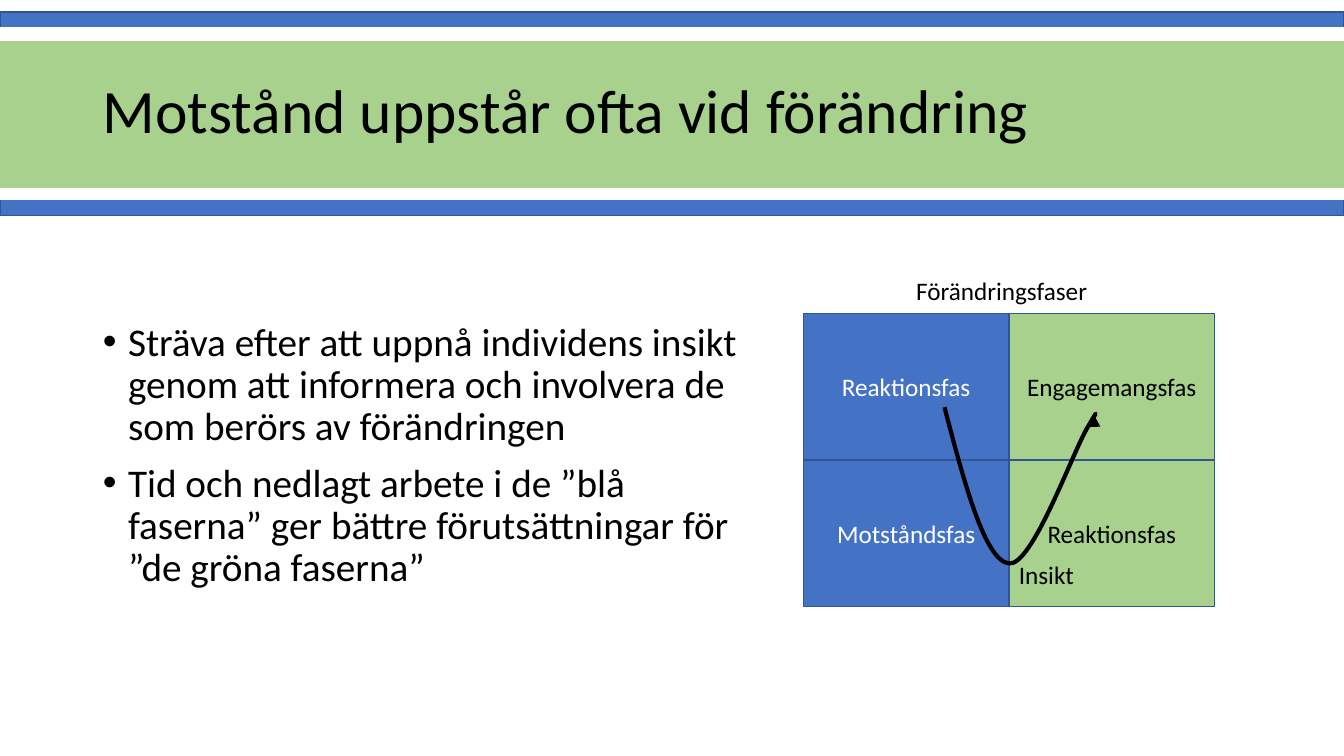
from dataclasses import dataclass

from lxml import etree
from pptx import Presentation
from pptx.dml.color import RGBColor
from pptx.enum.shapes import MSO_SHAPE
from pptx.enum.text import MSO_ANCHOR, MSO_AUTO_SIZE, PP_ALIGN
from pptx.oxml.ns import qn
from pptx.util import Pt

RECTANGLE = MSO_SHAPE.RECTANGLE
MIDDLE, TOP = MSO_ANCHOR.MIDDLE, MSO_ANCHOR.TOP
LEFT, CENTER = PP_ALIGN.LEFT, PP_ALIGN.CENTER
NO_AUTOFIT = MSO_AUTO_SIZE.NONE


@dataclass(frozen=True)
class Theme:
    font: str = "Calibri"
    blue: str = "4472C4"
    outline: str = "325491"
    green: str = "A9D18E"
    white: str = "FFFFFF"
    black: str = "000000"
    title_size: float = 44
    body_size: float = 28
    label_size: float = 18


THEME = Theme()


@dataclass(frozen=True)
class Band:
    top: float
    height: float
    fill: str
    line: str


@dataclass(frozen=True)
class Phase:
    name: str
    column: int
    row: int
    fill: str
    text_color: str


@dataclass(frozen=True)
class Label:
    text: str
    left: float
    top: float


SLIDE_WIDTH, SLIDE_HEIGHT = 960, 540
GRID_LEFT, GRID_TOP = 573.84, 223.92
PHASE_WIDTH, PHASE_HEIGHT = 146.88, 104.76
LABEL_HEIGHT = 29

BANDS = [
    Band(8.64, 145.44, THEME.blue, THEME.outline),
    Band(19.44, 123.12, THEME.white, THEME.white),
    Band(29.52, 104.4, THEME.green, THEME.green),
]
PHASES = [
    Phase("Reaktionsfas", 0, 0, THEME.blue, THEME.white),
    Phase("Motståndsfas", 0, 1, THEME.blue, THEME.white),
    Phase("Engagemangsfas", 1, 0, THEME.green, THEME.black),
    Phase("Reaktionsfas", 1, 1, THEME.green, THEME.black),
]
LABELS = [
    Label("Förändringsfaser", 647.28, 192.96),
    Label("Insikt", 720.72, 396),
]
ADVICE = [
    "Sträva efter att uppnå individens insikt genom att informera och involvera de som berörs av förändringen",
    "Tid och nedlagt arbete i de ”blå faserna” ger bättre förutsättningar för ”de gröna faserna”",
]
# Start point, then three Bézier points for each stretch
INSIGHT_CURVE = [
    (674.64, 290.88),
    (689.04, 345.6), (703.44, 400.32), (720.72, 402.48),
    (737.28, 404.64), (766.08, 323.28), (776.88, 305.28),
    (786.96, 288), (782.64, 298.08), (783.36, 295.92),
    (784.08, 294.48), (782.64, 295.2), (781.2, 295.92),
]


def place(shape, left: float, top: float, width: float, height: float) -> None:
    shape.left, shape.top = Pt(left), Pt(top)
    shape.width, shape.height = Pt(width), Pt(height)


def style(paragraph, size: float, color: str, align=LEFT) -> None:
    paragraph.alignment = align
    paragraph.font.name = THEME.font
    paragraph.font.size = Pt(size)
    paragraph.font.color.rgb = RGBColor.from_string(color)


def add_rectangle(slide, left: float, top: float, width: float, height: float,
                  fill: str, line: str):
    rectangle = slide.shapes.add_shape(RECTANGLE, Pt(left), Pt(top), Pt(width), Pt(height))
    rectangle.shadow.inherit = False
    rectangle.fill.solid()
    rectangle.fill.fore_color.rgb = RGBColor.from_string(fill)
    rectangle.line.color.rgb = RGBColor.from_string(line)
    rectangle.line.width = Pt(1)
    return rectangle


def add_phase(slide, phase: Phase) -> None:
    cell = add_rectangle(slide, GRID_LEFT + phase.column * PHASE_WIDTH,
                         GRID_TOP + phase.row * PHASE_HEIGHT,
                         PHASE_WIDTH, PHASE_HEIGHT, phase.fill, THEME.outline)
    cell.text_frame.text = phase.name
    cell.text_frame.vertical_anchor = MIDDLE
    style(cell.text_frame.paragraphs[0], THEME.label_size, phase.text_color, CENTER)


def add_label(slide, label: Label) -> None:
    caption = slide.shapes.add_textbox(Pt(label.left), Pt(label.top),
                                       Pt(PHASE_WIDTH), Pt(LABEL_HEIGHT))
    caption.text_frame.word_wrap = True
    caption.text_frame.text = label.text
    style(caption.text_frame.paragraphs[0], THEME.label_size, THEME.black)


def add_curved_arrow(slide, points: list[tuple[float, float]]) -> None:
    start, *others = [(Pt(x), Pt(y)) for x, y in points]
    builder = slide.shapes.build_freeform(*start)
    builder.add_line_segments(others, close=False)
    arrow = builder.convert_to_shape()
    arrow.shadow.inherit = False
    arrow.fill.background()
    arrow.line.color.rgb = RGBColor.from_string(THEME.black)
    arrow.line.width = Pt(3)
    # Turn every three points into one cubic stretch
    outline = next(arrow.element.iter(qn("a:path")))
    segments = outline.findall(qn("a:lnTo"))
    for first in range(0, len(segments), 3):
        stretch = etree.SubElement(outline, qn("a:cubicBezTo"))
        for segment in segments[first:first + 3]:
            stretch.append(segment[0])
            outline.remove(segment)
    line = arrow.element.spPr.find(qn("a:ln"))
    etree.SubElement(line, qn("a:tailEnd"), type="triangle")


def fill_title(title) -> None:
    place(title, 66.24, 28.8, 828, 104.4)
    frame = title.text_frame
    frame.text = "Motstånd uppstår ofta vid förändring"
    frame.vertical_anchor = MIDDLE
    frame.auto_size = NO_AUTOFIT
    style(frame.paragraphs[0], THEME.title_size, THEME.black)
    frame.paragraphs[0].line_spacing = 0.9
    # Bring the title in front of the bands
    title.element.getparent().append(title.element)


def fill_advice(body) -> None:
    place(body, 66.24, 185.76, 470.16, 300.96)
    frame = body.text_frame
    frame.text = "\n".join(ADVICE)
    frame.vertical_anchor = TOP
    frame.auto_size = NO_AUTOFIT
    frame.margin_top = Pt(44.4)
    for paragraph in frame.paragraphs:
        style(paragraph, THEME.body_size, THEME.black)
        paragraph.line_spacing = 0.9
        paragraph.space_before = Pt(10)
        properties = paragraph._p.get_or_add_pPr()
        properties.set("marL", str(Pt(18)))
        properties.set("indent", str(Pt(-18)))


def main() -> None:
    presentation = Presentation()
    presentation.slide_width, presentation.slide_height = Pt(SLIDE_WIDTH), Pt(SLIDE_HEIGHT)
    slide = presentation.slides.add_slide(presentation.slide_layouts[1])

    # Heading
    for band in BANDS:
        add_rectangle(slide, 0, band.top, SLIDE_WIDTH, band.height, band.fill, band.line)
    fill_title(slide.shapes.title)

    # Advice
    fill_advice(slide.placeholders[1])

    # Phases of change
    for phase in PHASES:
        add_phase(slide, phase)
    add_curved_arrow(slide, INSIGHT_CURVE)
    for label in LABELS:
        add_label(slide, label)

    presentation.save("out.pptx")


if __name__ == "__main__":
    main()
